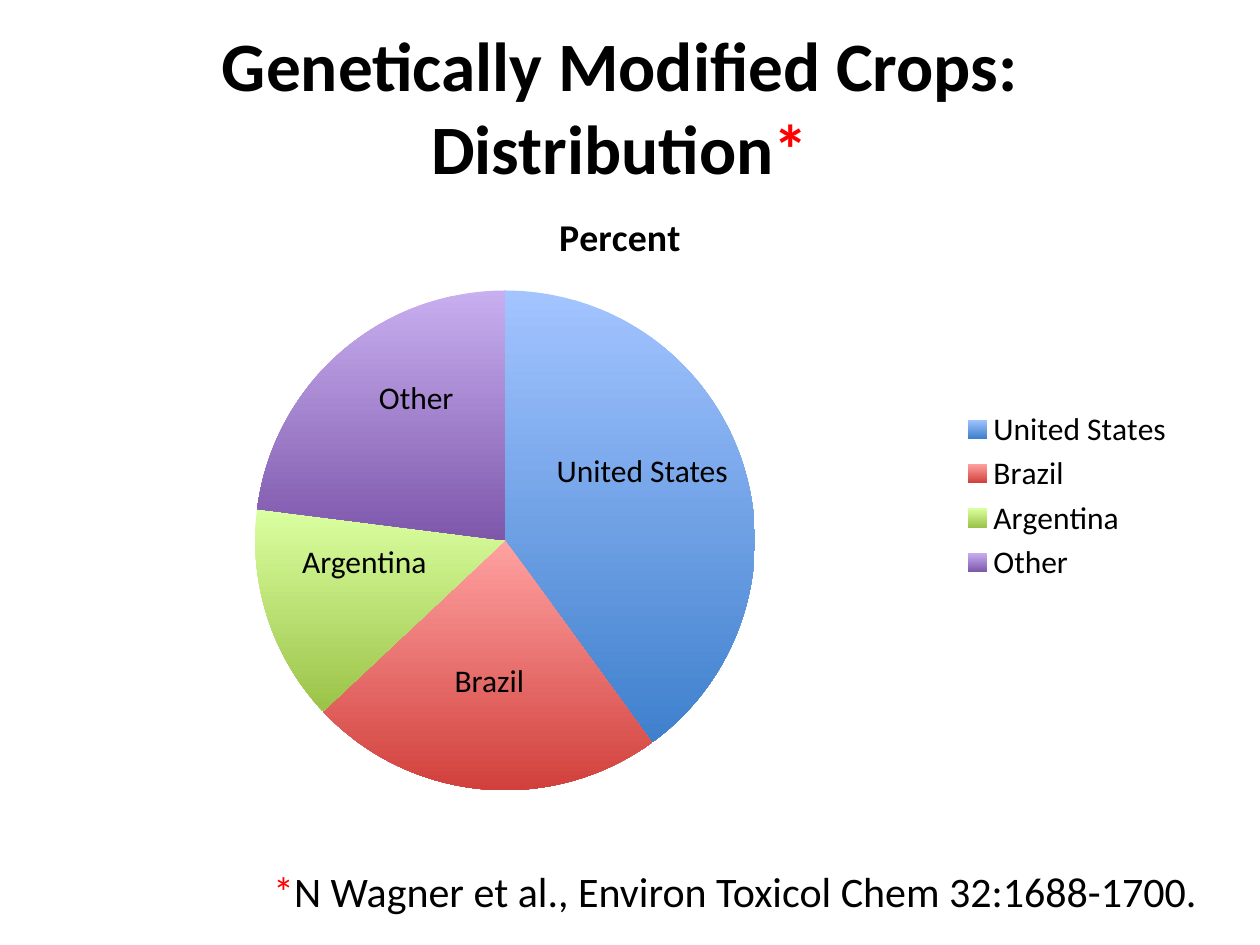
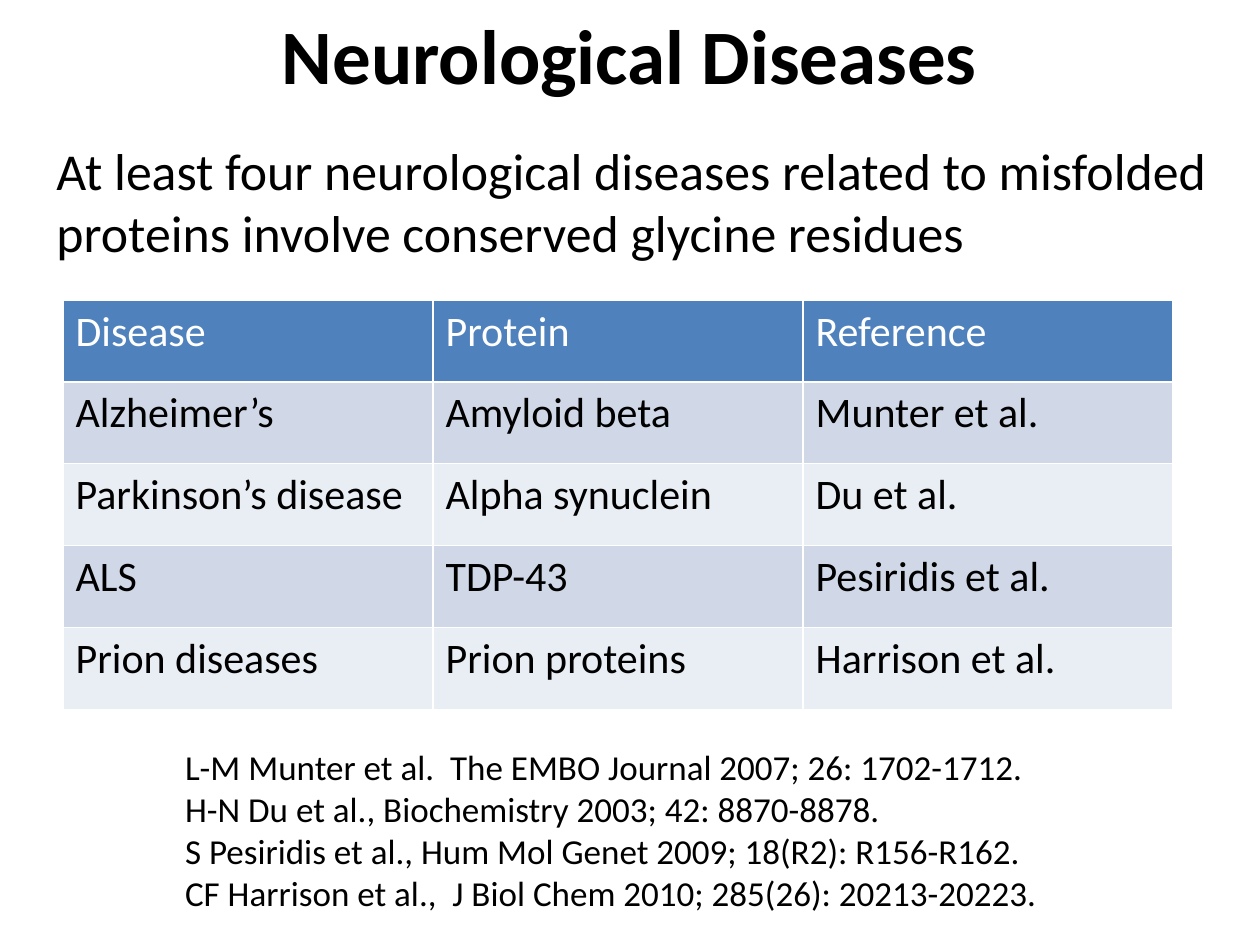
from pptx import Presentation
from pptx import util as u
from pptx.chart.data import CategoryChartData
from pptx.dml.color import RGBColor
from pptx.enum import chart as charts, text

# Shared style
FONT = "Calibri"
BLACK = RGBColor(0x00, 0x00, 0x00)
WHITE = RGBColor(0xFF, 0xFF, 0xFF)
RED = RGBColor(0xFF, 0x00, 0x00)
HEADER = RGBColor(0x4F, 0x81, 0xBD)
BANDS = [RGBColor(0xE9, 0xED, 0xF4), RGBColor(0xD0, 0xD8, 0xE8)]

deck = Presentation()
deck.slide_width, deck.slide_height = u.Inches(10), u.Inches(7.5)
TITLE_ONLY = deck.slide_layouts[5]


def write(para, words, size=18, color=BLACK, bold=False):
    span = para.add_run()
    span.text = words
    span.font.name, span.font.size = FONT, u.Pt(size)
    span.font.color.rgb, span.font.bold = color, bold


def place(page, left, top, width, height, title=False, wrap=False):
    """Position the title placeholder or a new text box; return its frame."""
    area = [u.Inches(side) for side in (left, top, width, height)]
    if title:
        box = page.shapes.title
        box.left, box.top, box.width, box.height = area
    else:
        box = page.shapes.add_textbox(*area)
    frame = box.text_frame
    frame.word_wrap = wrap or title
    frame.auto_size = text.MSO_AUTO_SIZE.NONE
    if title:
        frame.vertical_anchor = text.MSO_ANCHOR.MIDDLE
        frame.paragraphs[0].alignment = text.PP_ALIGN.CENTER
    return frame


# Slide 1: crop distribution
page = deck.slides.add_slide(TITLE_ONLY)
para = place(page, 0.42, 0.21, 9, 1.25, title=True).paragraphs[0]
write(para, "Genetically Modified Crops: Distribution", size=39.6, bold=True)
write(para, "*", size=39.6, color=RED, bold=True)

# Pie: country, percent, gradient top and bottom, label left and top
slices = [
    ("United States", 40, "A3C4FF", "3F80CD", 4.32, 3.53, 1.59),
    ("Brazil", 23, "FFA2A1", "D1403C", 3.51, 5.2, 0.76),
    ("Argentina", 14, "DAFFA0", "9BC348", 2.3, 4.25, 1.21),
    ("Other", 23, "C8AFF0", "7E57AB", 2.91, 2.95, 0.8),
]
data = CategoryChartData()
data.categories = [country for country, *_ in slices]
data.add_series("Percent", [percent for _, percent, *_ in slices])
pie = page.shapes.add_chart(
    charts.XL_CHART_TYPE.PIE, u.Inches(0.42), u.Inches(1.46),
    u.Inches(9), u.Inches(4.95), data).chart
pie.font.name, pie.font.size = FONT, u.Pt(18)
pie.font.color.rgb = BLACK
pie.has_title = True
write(pie.chart_title.text_frame.paragraphs[0], "Percent", size=21.6, bold=True)
pie.has_legend = True
pie.legend.position = charts.XL_LEGEND_POSITION.RIGHT
pie.legend.include_in_layout = False
pie.plots[0].vary_by_categories = True

for index, (country, _, light, dark, left, top, width) in enumerate(slices):
    fill = pie.plots[0].series[0].points[index].format.fill
    fill.gradient()
    fill.gradient_angle = 270
    for stop, shade in zip(fill.gradient_stops, (light, dark)):
        stop.color.rgb = RGBColor.from_string(shade)
    write(place(page, left, top, width, 0.4).paragraphs[0], country)

# Source note
para = place(page, 2.07, 6.82, 7.67, 0.5).paragraphs[0]
write(para, "*", size=24, color=RED)
write(para, "N Wagner et al., Environ Toxicol Chem 32:1688-1700.", size=24)

# Slide 2: neurological diseases
page = deck.slides.add_slide(TITLE_ONLY)
para = place(page, 0.5, -0.2, 9, 1.25, title=True).paragraphs[0]
write(para, "Neurological Diseases", size=44, bold=True)
para = place(page, 0.35, 1.05, 9.5, 1.45, wrap=True).paragraphs[0]
write(para, "At least four neurological diseases related to misfolded "
            "proteins involve conserved glycine residues", size=29.6)

# Disease table
rows = [
    ("Disease", "Protein", "Reference"),
    ("Alzheimer’s", "Amyloid beta", "Munter et al."),
    ("Parkinson’s disease", "Alpha synuclein", "Du et al."),
    ("ALS", "TDP-43", "Pesiridis et al."),
    ("Prion diseases", "Prion proteins", "Harrison et al."),
]
table = page.shapes.add_table(
    len(rows), len(rows[0]), u.Inches(0.5), u.Inches(2.38),
    u.Inches(8.81), u.Inches(3.25)).table
for r, row in enumerate(rows):
    for c, words in enumerate(row):
        cell = table.cell(r, c)
        cell.fill.solid()
        cell.fill.fore_color.rgb = BANDS[r % 2] if r else HEADER
        write(cell.text_frame.paragraphs[0], words, size=24,
              color=BLACK if r else WHITE)

# References
references = [
    "L-M Munter et al.  The EMBO Journal 2007; 26: 1702-1712.",
    "H-N Du et al., Biochemistry 2003; 42: 8870-8878.",
    "S Pesiridis et al., Hum Mol Genet 2009; 18(R2): R156-R162.",
    "CF Harrison et al.,  J Biol Chem 2010; 285(26): 20213-20223.",
]
frame = place(page, 1.37, 5.87, 7.02, 1.45)
for index, reference in enumerate(references):
    para = frame.add_paragraph() if index else frame.paragraphs[0]
    write(para, reference, size=20)

deck.save("out.pptx")
